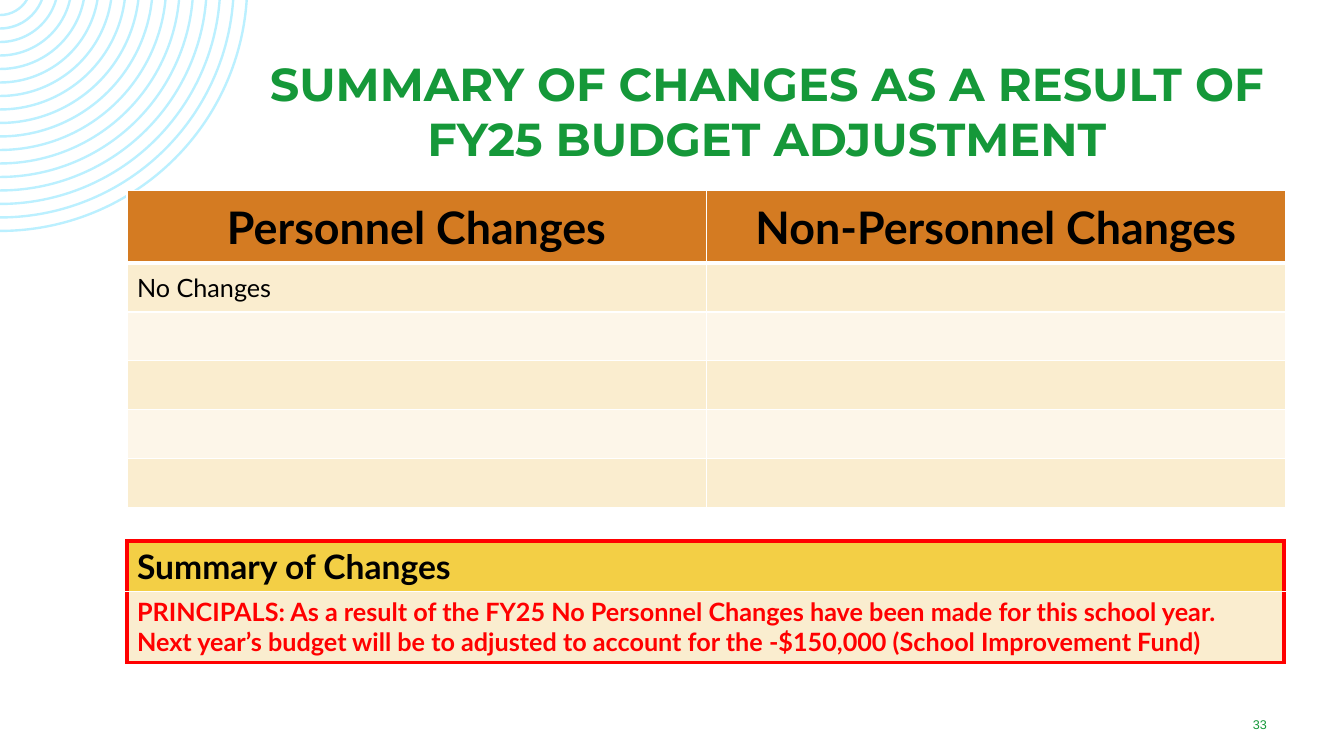
"""Build the budget adjustment slide with its changes table and summary table."""
from math import asin, cos, degrees, sin

from lxml.etree import SubElement
from pptx import Presentation
from pptx.dml.color import RGBColor
from pptx.enum.text import MSO_ANCHOR, PP_ALIGN
from pptx.oxml.ns import qn
from pptx.util import Cm, Pt

COLORS = {
    "ring": "BBF0FF", "green": "159839", "orange": "D47B22", "cream": "FAEDCF",
    "pale": "FDF6E9", "yellow": "F3CF45", "red": "FF0000", "white": "FFFFFF",
    "black": "000000",
}


def write(frame, text, font_name, size, color, bold=False, align=PP_ALIGN.LEFT):
    frame.word_wrap = True
    paragraph = frame.paragraphs[0]
    paragraph.text = text
    paragraph.alignment = align
    paragraph.font.name = font_name
    paragraph.font.size = Pt(size)
    paragraph.font.bold = bold
    paragraph.font.color.rgb = RGBColor.from_string(COLORS[color])


def style_cell(cell, fill, borders):
    properties = cell._tc.get_or_add_tcPr()
    for side, (color, width) in zip("LRTB", borders):
        line = SubElement(properties, qn(f"a:ln{side}"), w=str(Pt(width)))
        solid = SubElement(line, qn("a:solidFill"))
        SubElement(solid, qn("a:srgbClr"), val=COLORS[color])
    cell.fill.solid()
    cell.fill.fore_color.rgb = RGBColor.from_string(COLORS[fill])


presentation = Presentation()
presentation.slide_width = Cm(33.87)
presentation.slide_height = Cm(19.05)
slide = presentation.slides.add_slide(presentation.slide_layouts[6])

RING_COUNT, RING_STEP, RING_WIDTH = 17, 0.34, 0.06
center_y, outer_radius = -0.41, 6.26
rings, arcs = [], []
for index in range(RING_COUNT):
    outer = outer_radius - index * RING_STEP
    inner = outer - RING_WIDTH
    outer_start, inner_start = [asin(-center_y / radius) for radius in (outer, inner)]
    rings.append([
        (Cm(outer * cos(outer_start)), 0), (0, Cm(center_y + outer)),
        (0, Cm(center_y + inner)), (Cm(inner * cos(inner_start)), 0),
    ])
    arcs.append((outer, degrees(outer_start), 90 - degrees(outer_start)))
    arcs.append((inner, 90, degrees(inner_start) - 90))
builder = slide.shapes.build_freeform(*rings[0][0])
for index, points in enumerate(rings):
    if index:
        builder.move_to(*points[0])
    builder.add_line_segments(points[1:], close=True)
ring_shape = builder.convert_to_shape()
ring_shape.shadow.inherit = False
ring_shape.fill.solid()
ring_shape.fill.fore_color.rgb = RGBColor.from_string(COLORS["ring"])
ring_shape.line.fill.background()

segments = list(ring_shape._element.iter(qn("a:lnTo")))
curved = [segment for index, segment in enumerate(segments) if index % 3 != 1]
for segment, (radius, start, sweep) in zip(curved, arcs):
    contour = segment.getparent()
    arc = SubElement(contour, qn("a:arcTo"), wR=str(Cm(radius)), hR=str(Cm(radius)),
                     stAng=str(round(start * 60000)), swAng=str(round(sweep * 60000)))
    contour.replace(segment, arc)

title = slide.shapes.add_textbox(Cm(6.25), Cm(1.27), Cm(26.16), Cm(3.73))
write(title.text_frame, "SUMMARY OF CHANGES AS A RESULT OF FY25 BUDGET ADJUSTMENT",
      "Montserrat", 33, "green", True, PP_ALIGN.CENTER)

HEADER_HEIGHT, ROW_HEIGHT = 1.83, 1.23
THIN, THICK, FRAME = ("white", 1), ("white", 3), ("red", 3)
changes = slide.shapes.add_table(6, 2, Cm(3.2), Cm(4.8), Cm(29.2), Cm(7.98)).table
for row_index, row in enumerate(changes.rows):
    row.height = Cm(ROW_HEIGHT if row_index else HEADER_HEIGHT)
    fill = ("cream" if row_index % 2 else "pale") if row_index else "orange"
    top = THICK if row_index == 1 else THIN
    bottom = THIN if row_index else THICK
    for cell in row.cells:
        style_cell(cell, fill, (THIN, THIN, top, bottom))
        cell.vertical_anchor = MSO_ANCHOR.MIDDLE
        cell.text_frame.paragraphs[0].font.size = Pt(18)
for column, heading in enumerate(("Personnel Changes", "Non-Personnel Changes")):
    write(changes.cell(0, column).text_frame, heading, "Lato", 32, "black", True, PP_ALIGN.CENTER)
write(changes.cell(1, 0).text_frame, "No Changes", "Lato", 18, "black")

number = slide.shapes.add_textbox(Cm(30.38), Cm(17.88), Cm(2.74), Cm(0.76))
number.text_frame.vertical_anchor = MSO_ANCHOR.MIDDLE
write(number.text_frame, "33", "Arial", 9, "green", align=PP_ALIGN.CENTER)

summary = slide.shapes.add_table(2, 1, Cm(3.2), Cm(13.64), Cm(29.16), Cm(3.05)).table
summary_rows = (
    (1.27, "Summary of Changes", 24, "black", "yellow", FRAME, THIN),
    (1.78, "PRINCIPALS: As a result of the FY25 No Personnel Changes have been made for this "
     "school year. Next year’s budget will be to adjusted to account for the -$150,000 "
     "(School Improvement Fund)", 18, "red", "cream", THIN, FRAME),
)
for row, (height, text, size, color, fill, top, bottom) in zip(summary.rows, summary_rows):
    row.height = Cm(height)
    cell = row.cells[0]
    style_cell(cell, fill, (FRAME, FRAME, top, bottom))
    write(cell.text_frame, text, "Lato", size, color, True)

presentation.save("out.pptx")
